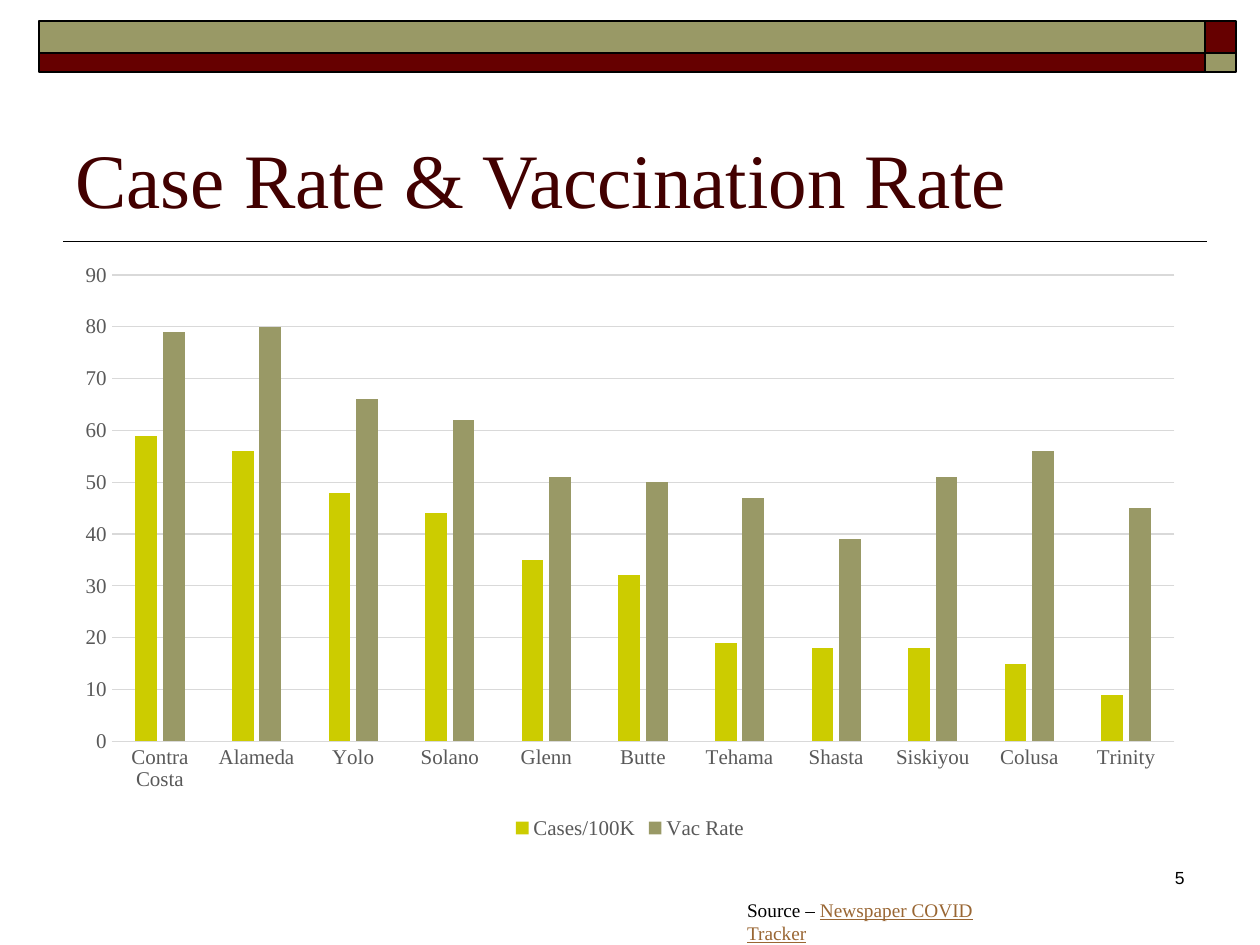
from lxml import etree
from pptx import Presentation
from pptx.chart.data import CategoryChartData
from pptx.dml.color import RGBColor
from pptx.enum import chart as ch, shapes, text
from pptx.oxml.ns import qn
from pptx.util import Cm, Pt

SERIF, SANS = "Times New Roman", "Arial"
MAROON, OLIVE, LIME = "660000", "999966", "CCCC00"
BLACK, GREY, RULE = "000000", "595959", "D9D9D9"

# Content
TITLE = "Case Rate & Vaccination Rate"
PAGE_NUMBER = "5"
SOURCE = [("Source – ", BLACK, False), ("Newspaper COVID Tracker", "996633", True)]
COUNTIES = ["Contra Costa", "Alameda", "Yolo", "Solano", "Glenn", "Butte",
            "Tehama", "Shasta", "Siskiyou", "Colusa", "Trinity"]
SERIES = [
    ("Cases/100K", LIME, [59, 56, 48, 44, 35, 32, 19, 18, 18, 15, 9]),
    ("Vac Rate", OLIVE, [79, 80, 66, 62, 51, 50, 47, 39, 51, 56, 45]),
]

# Banner grid in cm: (start, size) of columns and rows, with alternating colours
BANNER_COLUMNS = [(0.79, 23.5), (24.29, 0.63)]
BANNER_ROWS = [(0.43, 0.64), (1.07, 0.38)]
BANNER_COLOURS = [OLIVE, MAROON]


def colour(value):
    return RGBColor.from_string(value)


def style_font(font, size, name, value):
    font.size, font.name = Pt(size), name
    font.color.rgb = colour(value)


def style_line(line, value, width):
    line.color.rgb = colour(value)
    line.width = Pt(width)


def add_banner(page):
    for r, (top, height) in enumerate(BANNER_ROWS):
        for c, (left, width) in enumerate(BANNER_COLUMNS):
            box = page.shapes.add_shape(shapes.MSO_SHAPE.RECTANGLE,
                                        Cm(left), Cm(top), Cm(width), Cm(height))
            box.shadow.inherit = False
            box.fill.solid()
            box.fill.fore_color.rgb = colour(BANNER_COLOURS[(r + c) % 2])
            style_line(box.line, BLACK, 1)


def add_title(page):
    title = page.shapes.title
    title.left, title.top, title.width, title.height = Cm(1.27), Cm(1.47), Cm(22.86), Cm(3.18)
    frame = title.text_frame
    frame.text = TITLE
    frame.vertical_anchor = text.MSO_ANCHOR.BOTTOM
    frame.auto_size = text.MSO_AUTO_SIZE.NONE
    para = frame.paragraphs[0]
    para.alignment = text.PP_ALIGN.LEFT
    style_font(para.font, 44, SERIF, "420000")
    # Rule below the title
    rule = page.shapes.add_connector(shapes.MSO_CONNECTOR.STRAIGHT,
                                     Cm(1.27), Cm(4.87), Cm(24.33), Cm(4.87))
    style_line(rule.line, BLACK, 1)
    etree.SubElement(rule._element.spPr, qn("a:effectLst"))


def add_rate_chart(page):
    data = CategoryChartData()
    data.categories = COUNTIES
    for name, _, values in SERIES:
        data.add_series(name, values)
    chart = page.shapes.add_chart(ch.XL_CHART_TYPE.COLUMN_CLUSTERED, Cm(1.27), Cm(5.08),
                                  Cm(22.86), Cm(11.94), data).chart
    style_font(chart.font, 10, SERIF, BLACK)
    chart.has_title = False

    plot = chart.plots[0]
    plot.gap_width, plot.overlap, plot.vary_by_categories = 219, -27, False
    for series, (_, fill, _) in zip(plot.series, SERIES):
        series.format.fill.solid()
        series.format.fill.fore_color.rgb = colour(fill)

    for axis in (chart.category_axis, chart.value_axis):
        axis.major_tick_mark = axis.minor_tick_mark = ch.XL_TICK_MARK.NONE
        style_font(axis.tick_labels.font, 12, SERIF, GREY)
    style_line(chart.category_axis.format.line, RULE, 0.75)
    values = chart.value_axis
    values.minimum_scale, values.maximum_scale, values.major_unit = 0, 90, 10
    values.format.line.fill.background()
    values.has_major_gridlines = True
    style_line(values.major_gridlines.format.line, RULE, 0.75)

    chart.has_legend = True
    chart.legend.position = ch.XL_LEGEND_POSITION.BOTTOM
    chart.legend.include_in_layout = False
    style_font(chart.legend.font, 12, SERIF, GREY)


def add_footer(page):
    number = page.shapes.add_textbox(Cm(18.85), Cm(17.35), Cm(5.28), Cm(1.27))
    number.text_frame.word_wrap = True
    para = number.text_frame.paragraphs[0]
    para.text = PAGE_NUMBER
    para.alignment = text.PP_ALIGN.RIGHT
    style_font(para.font, 10, SANS, BLACK)

    source = page.shapes.add_textbox(Cm(14.81), Cm(17.98), Cm(6.2), Cm(0.74))
    source.text_frame.word_wrap = False
    source.text_frame.auto_size = text.MSO_AUTO_SIZE.SHAPE_TO_FIT_TEXT
    para = source.text_frame.paragraphs[0]
    for words, value, underlined in SOURCE:
        span = para.add_run()
        span.text = words
        style_font(span.font, 11, SERIF, value)
        span.font.underline = underlined


def main():
    deck = Presentation()
    deck.slide_width, deck.slide_height = Cm(25.4), Cm(19.05)
    page = deck.slides.add_slide(deck.slide_layouts[5])
    add_banner(page)
    add_title(page)
    add_rate_chart(page)
    add_footer(page)
    deck.save("out.pptx")


if __name__ == "__main__":
    main()
